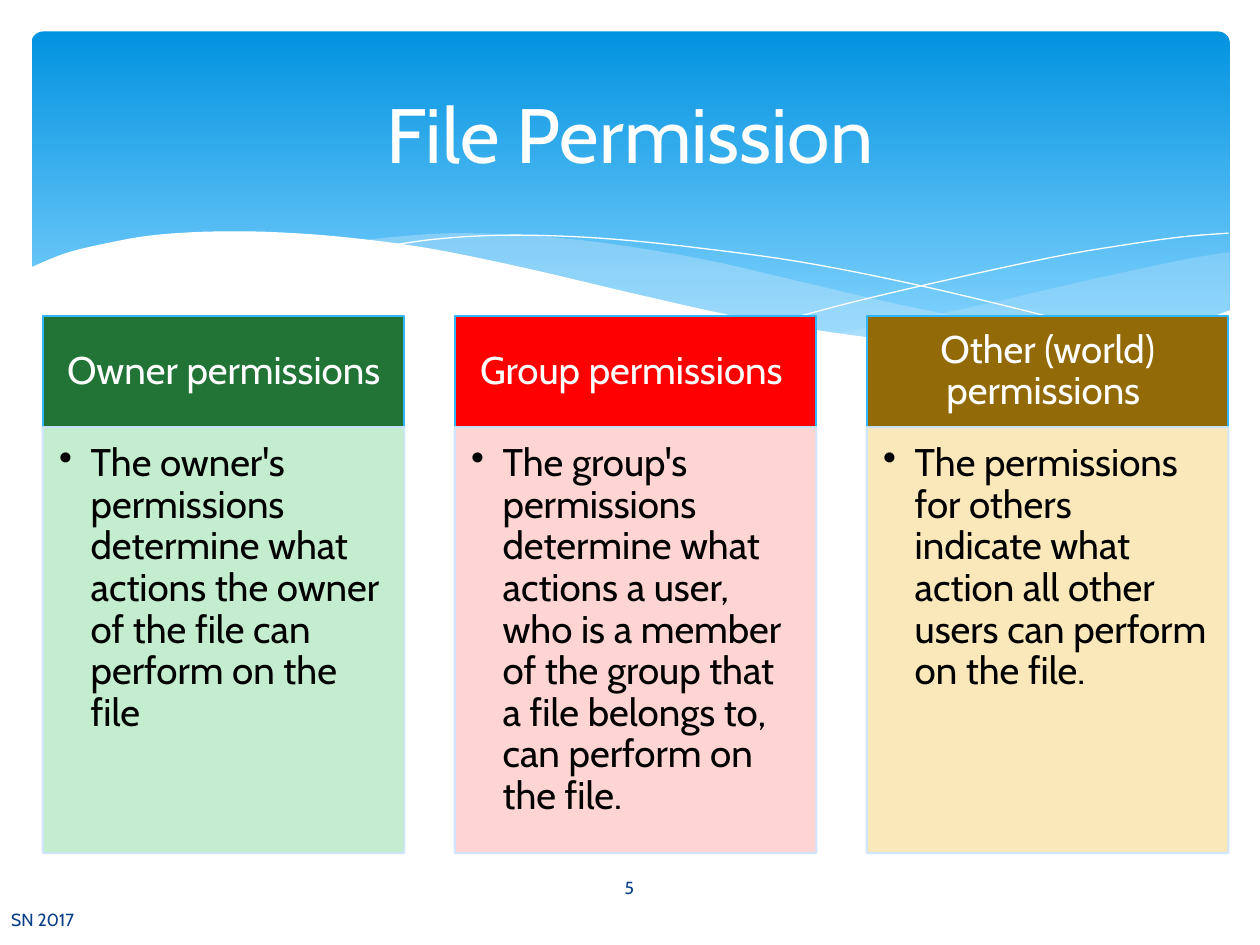
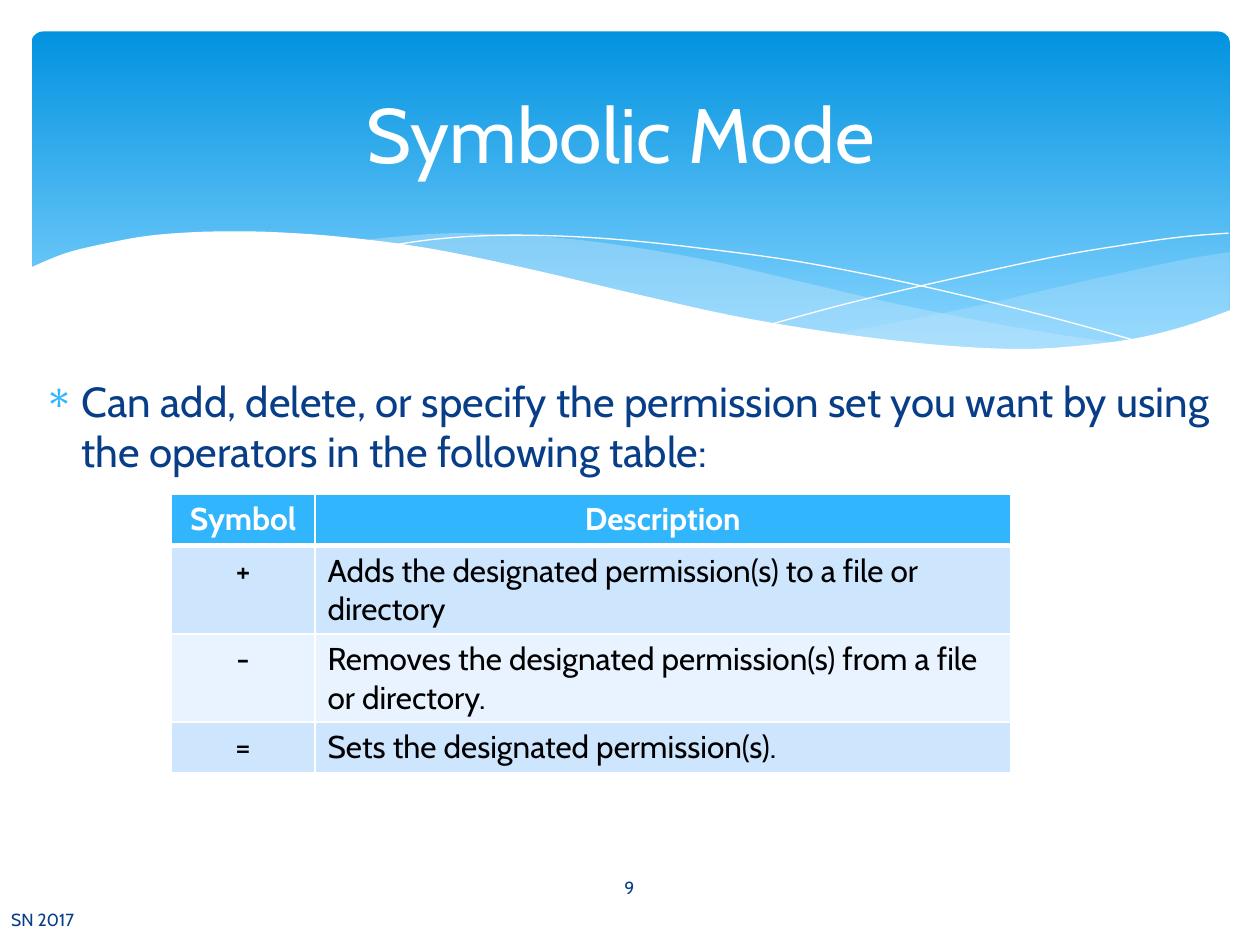
from dataclasses import dataclass

from lxml import etree
from pptx import Presentation
from pptx.dml.color import RGBColor
from pptx.enum.shapes import MSO_SHAPE
from pptx.enum.text import MSO_ANCHOR, PP_ALIGN
from pptx.oxml.ns import qn
from pptx.util import Inches, Pt

RECT = MSO_SHAPE.RECTANGLE
ROUND_RECT = MSO_SHAPE.ROUNDED_RECTANGLE
TOP, MIDDLE = MSO_ANCHOR.TOP, MSO_ANCHOR.MIDDLE
LEFT, CENTER = PP_ALIGN.LEFT, PP_ALIGN.CENTER


@dataclass(frozen=True)
class Theme:
    font: str = "Cabin"
    white: str = "FFFFFF"
    black: str = "000000"
    navy: str = "073E87"
    accent: str = "31B6FD"
    band_top: str = "0293E0"
    band_bottom: str = "83D3FE"
    swirl: str = "C6E7FC"
    pale: str = "CEE5FE"
    paler: str = "E8F3FF"
    title: int = 44
    body: int = 24
    card: int = 22
    table: int = 18
    footer: int = 10


T = Theme()

RIGHT_SWIRL_TOP = [(9.76, 2), (9.35, 2.07), (8.61, 2.23), (7.79, 2.42), (7.06, 2.57), (6.61, 2.65)]
RIGHT_SWIRL_BOTTOM = [(6.61, 2.65), (7.19, 2.72), (7.69, 2.77), (8.14, 2.78), (8.63, 2.75),
                      (9.05, 2.69), (9.42, 2.59), (9.76, 2.47)]
MID_SWIRL_TOP = [(8.93, 2.73), (8.37, 2.65), (7.75, 2.54), (7.06, 2.4), (6.29, 2.22), (5.69, 2.08),
                 (5.14, 1.98), (4.65, 1.91), (4.2, 1.87), (3.61, 1.85), (3.13, 1.88), (2.86, 1.91)]
MID_SWIRL_BOTTOM = [(2.86, 1.91), (3.42, 1.99), (4.04, 2.11), (4.91, 2.32), (5.66, 2.48),
                    (6.34, 2.61), (6.95, 2.7), (7.48, 2.76), (8.07, 2.78), (8.57, 2.77), (8.93, 2.73)]
FALLING_LINE = [(3.09, 1.95), (3.44, 1.9), (3.87, 1.87), (4.33, 1.87), (4.89, 1.9), (5.56, 1.97),
                (6.36, 2.08), (7.27, 2.26), (8.31, 2.51), (9.07, 2.72)]
RISING_LINE = [(6.13, 2.57), (6.72, 2.41), (7.48, 2.23), (8.36, 2.04), (8.95, 1.94), (9.38, 1.88), (9.75, 1.85)]
WAVE_EDGE = [(9.77, 2.46), (9.4, 2.59), (8.99, 2.69), (8.5, 2.75), (8.09, 2.77), (7.61, 2.75),
             (7.08, 2.7), (6.48, 2.62), (5.79, 2.5), (5.03, 2.33), (4.18, 2.13), (3.4, 1.97),
             (2.71, 1.88), (2.11, 1.84), (1.61, 1.84), (1.19, 1.87), (0.85, 1.93), (0.52, 2.01), (0.23, 2.13)]

CARDS = [
    ("Owner permissions ", "217436", "BDECC9",
     "The owner's permissions determine what actions the owner of the file can perform on the file"),
    ("Group permissions ", "FF0000", "FED1CE",
     "The group's permissions determine what actions a user, who is a member of the group "
     "that a file belongs to, can perform on the file."),
    ("Other (world) permissions ", "936A08", "FBE6B3",
     "The permissions for others indicate what action all other users can perform on the file."),
]

OPERATORS = [
    ("Symbol", "Description"),
    ("+", "Adds the designated permission(s) to a file or directory"),
    ("-", "Removes the designated permission(s) from a file or directory."),
    ("=", "Sets the designated permission(s)."),
]


def rgb(color):
    return RGBColor.from_string(color)


def box(x, y, w, h):
    return Inches(x), Inches(y), Inches(w), Inches(h)


def smooth(knots, steps=5):
    padded = [knots[0], *knots, knots[-1]]
    points = [knots[0]]
    for a, b, c, d in zip(padded, padded[1:], padded[2:], padded[3:]):
        for i in range(1, steps + 1):
            t = i / steps
            points.append(tuple(
                0.5 * (2 * q + (r - p) * t + (2 * p - 5 * q + 4 * r - s) * t ** 2
                       + (3 * q - p - 3 * r + s) * t ** 3)
                for p, q, r, s in zip(a, b, c, d)))
    return points


def style_shape(s, fill=None, line=None, width=0, alpha=None):
    s.shadow.inherit = False
    if fill:
        s.fill.solid()
        s.fill.fore_color.rgb = rgb(fill)
    else:
        s.fill.background()
    if line:
        s.line.color.rgb = rgb(line)
        s.line.width = Pt(width)
    else:
        s.line.fill.background()
    if alpha:
        for color in s._element.spPr.iter(qn("a:srgbClr")):
            etree.SubElement(color, qn("a:alpha"), val=str(alpha * 1000))


def add_outline(slide, points, closed=True, **style):
    points = [(Inches(x), Inches(y)) for x, y in points]
    builder = slide.shapes.build_freeform(*points[0])
    builder.add_line_segments(points[1:], close=closed)
    style_shape(builder.convert_to_shape(), **style)


def write(tf, text, size, color, align=LEFT, anchor=TOP, bold=False):
    tf.word_wrap = True
    tf.vertical_anchor = anchor
    p = tf.paragraphs[0]
    p.text = text
    p.alignment = align
    p.font.name = T.font
    p.font.size = Pt(size)
    p.font.bold = bold
    p.font.color.rgb = rgb(color)
    return p


def add_bullet(p, char, indent, color=None):
    pPr = p._p.get_or_add_pPr()
    pPr.set("marL", str(Inches(indent)))
    pPr.set("indent", str(-Inches(indent)))
    bullet = etree.Element(qn("a:buChar"), char=char)
    pPr.insert_element_before(bullet, "a:tabLst", "a:defRPr", "a:extLst")
    if color:
        buClr = etree.Element(qn("a:buClr"))
        etree.SubElement(buClr, qn("a:srgbClr"), val=color)
        bullet.addprevious(buClr)


def add_text(slide, place, text, size, color, **layout):
    tf = slide.shapes.add_textbox(*box(*place)).text_frame
    return write(tf, text, size, color, **layout)


def add_panel(slide, place, text, insets, fill, line, color, alpha=None, **layout):
    s = slide.shapes.add_shape(RECT, *box(*place))
    style_shape(s, fill, line, 1.25, alpha)
    tf = s.text_frame
    tf.margin_left, tf.margin_top, tf.margin_right, tf.margin_bottom = map(Inches, insets)
    p = write(tf, text, T.card, color, **layout)
    p.line_spacing = 0.9
    return p


def add_card(slide, x, heading, dark, light, text):
    width, top, split, bottom = 2.87, 2.51, 3.39, 6.77
    add_panel(slide, (x, top, width, split - top), heading, (0.17, 0.1, 0.17, 0.1),
              dark, T.accent, T.white, align=CENTER, anchor=MIDDLE)
    p = add_panel(slide, (x, split, width, bottom - split), text, (0.13, 0.13, 0.17, 0.19),
                  light, T.pale, T.black, alpha=90)
    add_bullet(p, "•", 0.25)


def add_banner(slide):
    s = slide.shapes.add_shape(ROUND_RECT, *box(0.25, 0.25, 9.51, 2.7))
    s.adjustments[0] = 0.034
    style_shape(s)
    s.fill.gradient()
    s.fill.gradient_angle = 270
    for stop, color, position in zip(s.fill.gradient_stops, (T.band_top, T.band_bottom), (0, 0.9)):
        stop.color.rgb = rgb(color)
        stop.position = position

    add_outline(slide, smooth(RIGHT_SWIRL_TOP) + smooth(RIGHT_SWIRL_BOTTOM), fill=T.swirl, alpha=29)
    add_outline(slide, smooth(MID_SWIRL_TOP) + smooth(MID_SWIRL_BOTTOM), fill=T.swirl, alpha=40)
    for knots in (FALLING_LINE, RISING_LINE):
        add_outline(slide, smooth(knots), closed=False, line=T.white)
    add_outline(slide, smooth(WAVE_EDGE) + [(0.23, 3.29), (9.77, 3.29)], fill=T.white)


def add_base_slide(prs, title, number):
    slide = prs.slides.add_slide(prs.slide_layouts[6])
    add_banner(slide)
    add_text(slide, (0.5, 0.37, 9, 1.37), title, T.title, T.white, align=CENTER, anchor=MIDDLE)
    add_text(slide, (4.36, 6.84, 1.27, 0.4), number, T.footer, T.navy, align=CENTER, anchor=MIDDLE)
    add_text(slide, (-0.01, 7.1, 5.51, 0.4), "SN 2017", T.footer, T.navy, anchor=MIDDLE)
    return slide


def set_borders(cell, **widths):
    tcPr = cell._tc.get_or_add_tcPr()
    for side in "LRTB":
        ln = etree.SubElement(tcPr, qn(f"a:ln{side}"), w=str(Pt(widths.get(side, 1))))
        etree.SubElement(etree.SubElement(ln, qn("a:solidFill")), qn("a:srgbClr"), val=T.white)


def add_operator_table(slide):
    widths, heights = (1.14, 5.52), (0.41, 0.7, 0.7, 0.4)
    place = box(1.36, 3.92, sum(widths), sum(heights))
    table = slide.shapes.add_table(len(heights), len(widths), *place).table
    for column, width in zip(table.columns, widths):
        column.width = Inches(width)
    for r, (row, height) in enumerate(zip(table.rows, heights)):
        row.height = Inches(height)
        header = r == 0
        fill = T.accent if header else (T.paler, T.pale)[r % 2]
        for c, cell in enumerate(row.cells):
            set_borders(cell, T=3 if r == 1 else 1, B=3 if header else 1)
            cell.fill.solid()
            cell.fill.fore_color.rgb = rgb(fill)
            write(cell.text_frame, OPERATORS[r][c], T.table, T.white if header else T.black,
                  align=CENTER if header or c == 0 else LEFT, bold=header)


def build_file_permission(prs):
    slide = add_base_slide(prs, "File Permission", "5")
    for i, card in enumerate(CARDS):
        add_card(slide, 0.34 + 3.27 * i, *card)


def build_symbolic_mode(prs):
    slide = add_base_slide(prs, "Symbolic Mode ", "9")
    p = add_text(slide, (0.25, 2.93, 9.5, 3.77),
                 "Can add, delete, or specify the permission set you want by using "
                 "the operators in the following table:", T.body, T.navy)
    add_bullet(p, "∗", 0.3, T.accent)
    add_operator_table(slide)


def main():
    prs = Presentation()
    prs.slide_width, prs.slide_height = Inches(10), Inches(7.5)
    build_file_permission(prs)
    build_symbolic_mode(prs)
    prs.save("out.pptx")


if __name__ == "__main__":
    main()
